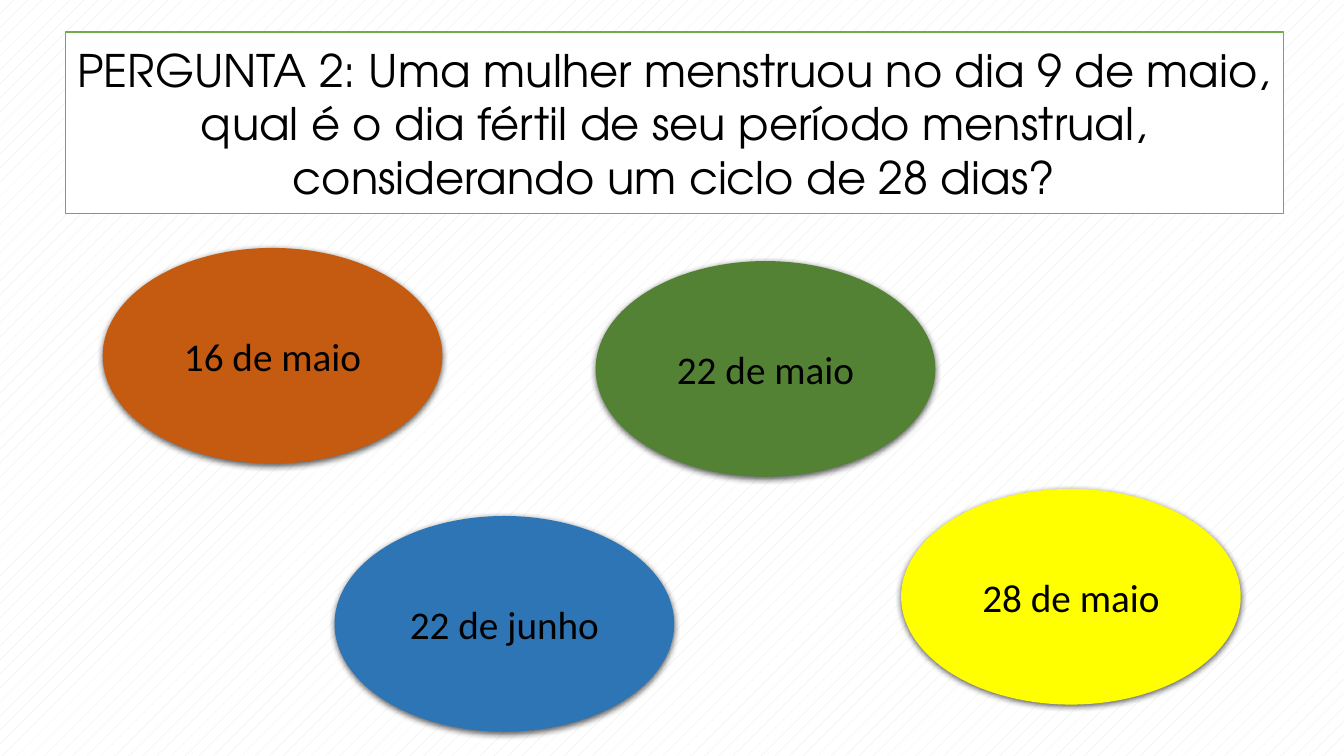
from lxml import etree
from pptx import Presentation
from pptx.dml.color import RGBColor
from pptx.enum.dml import MSO_PATTERN
from pptx.enum.shapes import MSO_SHAPE
from pptx.enum.text import MSO_ANCHOR, PP_ALIGN
from pptx.oxml import parse_xml
from pptx.oxml.ns import nsdecls
from pptx.util import Pt

RECTANGLE = MSO_SHAPE.RECTANGLE
OVAL = MSO_SHAPE.OVAL
DOTTED = MSO_PATTERN.PERCENT_5
CENTER = PP_ALIGN.CENTER
MIDDLE = MSO_ANCHOR.MIDDLE

QUESTION = ("PERGUNTA 2: Uma mulher menstruou no dia 9 de maio, qual é o dia "
            "fértil de seu período menstrual, considerando um ciclo de 28 dias?")
ANSWER_SIZE = (242.6, 154.1)
# Label, left, top, fill
ANSWERS = [
    ("16 de maio", 73.4, 177.1, "C55A11"),
    ("22 de maio", 425.5, 186.5, "548235"),
    ("22 de junho", 239, 368.6, "2E75B6"),
    ("28 de maio", 643.7, 349.2, "FFFF00"),
]


def color(hex_code):
    return RGBColor.from_string(hex_code)


def write_text(shape, text, font="Calibri", size=28, fill="000000"):
    frame = shape.text_frame
    frame.word_wrap = True
    frame.vertical_anchor = MIDDLE
    paragraph = frame.paragraphs[0]
    paragraph.alignment = CENTER
    run = paragraph.add_run()
    run.text = text
    run.font.name = font
    run.font.size = Pt(size)
    run.font.color.rgb = color(fill)


def add_panel(slide, kind, left, top, width, height, fill):
    panel = slide.shapes.add_shape(kind, Pt(left), Pt(top), Pt(width), Pt(height))
    panel.shadow.inherit = False
    panel.fill.solid()
    panel.fill.fore_color.rgb = color(fill)
    panel.line.fill.background()
    return panel


def add_drop_shadow(shape, blur=4.5, distance=1.5, opacity=63):
    effects = shape.element.spPr.find(
        etree.QName("http://schemas.openxmlformats.org/drawingml/2006/main", "effectLst"))
    effects.append(parse_xml(
        f'<a:outerShdw {nsdecls("a")} blurRad="{Pt(blur)}" dist="{Pt(distance)}" '
        f'dir="5400000" algn="ctr" rotWithShape="0"><a:srgbClr val="000000">'
        f'<a:alpha val="{opacity * 1000}"/></a:srgbClr></a:outerShdw>'))


def add_question(slide):
    question = add_panel(slide, RECTANGLE, 46.8, 23, 869.8, 129.6, "FFFFFF")
    question.line.color.rgb = color("70AD47")
    question.line.width = Pt(1)
    write_text(question, QUESTION, font="TeX Gyre Adventor", size=32)


def add_answer(slide, label, left, top, fill):
    answer = add_panel(slide, OVAL, left, top, *ANSWER_SIZE, fill)
    add_drop_shadow(answer)
    write_text(answer, label)


def set_background(slide):
    backdrop = slide.background.fill
    backdrop.patterned()
    backdrop.pattern = DOTTED
    backdrop.fore_color.rgb = color("E7E6E6")
    backdrop.back_color.rgb = color("FFFFFF")


def main():
    presentation = Presentation()
    presentation.slide_width = Pt(960)
    presentation.slide_height = Pt(540)
    slide = presentation.slides.add_slide(presentation.slide_layouts[6])

    # Patterned backdrop and question
    set_background(slide)
    add_question(slide)

    # Answer choices
    for answer in ANSWERS:
        add_answer(slide, *answer)

    presentation.save("out.pptx")


if __name__ == "__main__":
    main()
